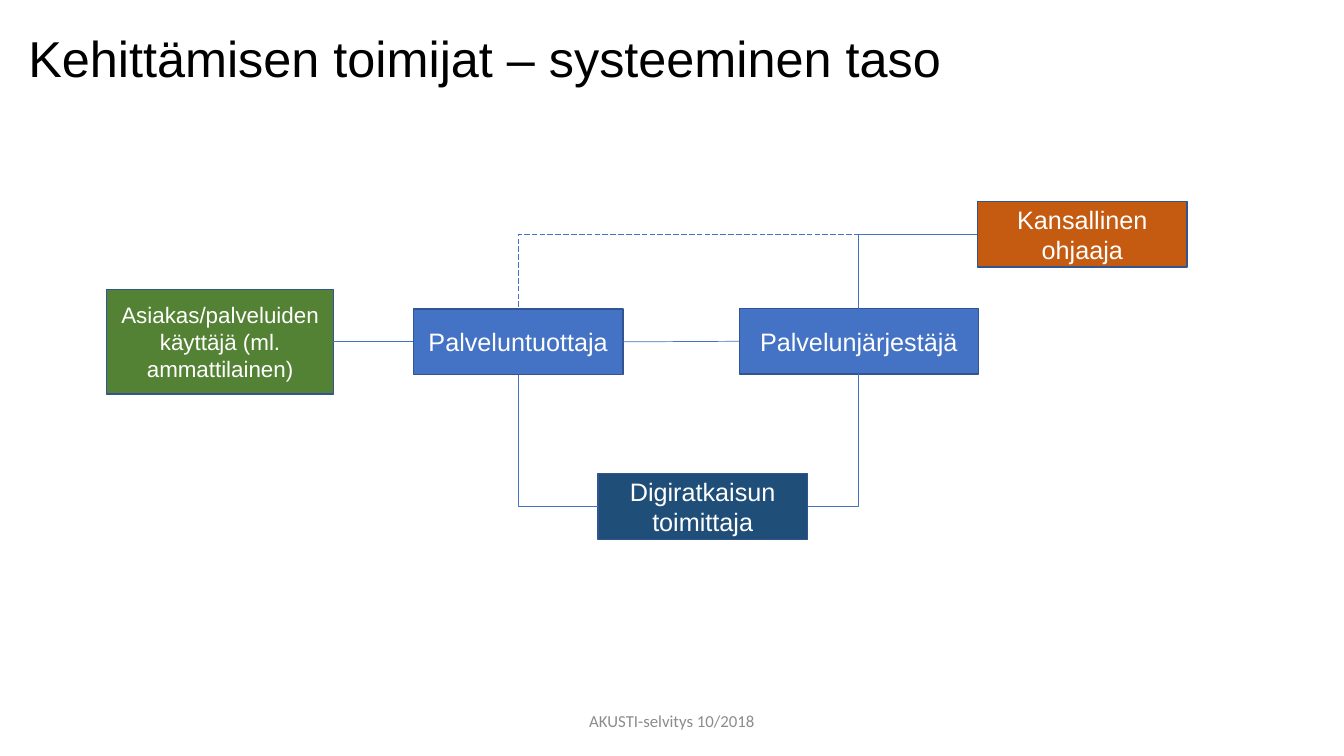
from dataclasses import dataclass

from lxml import etree
from pptx import Presentation
from pptx.dml.color import RGBColor
from pptx.enum.dml import MSO_LINE
from pptx.enum.shapes import MSO_CONNECTOR, MSO_SHAPE
from pptx.enum.text import MSO_ANCHOR, MSO_AUTO_SIZE, PP_ALIGN
from pptx.oxml.ns import qn
from pptx.shapes.autoshape import Shape
from pptx.slide import Slide
from pptx.text.text import TextFrame
from pptx.util import Pt

RECTANGLE = MSO_SHAPE.RECTANGLE
STRAIGHT, ELBOW = MSO_CONNECTOR.STRAIGHT, MSO_CONNECTOR.ELBOW
LONG_DASH = MSO_LINE.LONG_DASH
MIDDLE, TOP_ANCHOR = MSO_ANCHOR.MIDDLE, MSO_ANCHOR.TOP
CENTER, LEFT_ALIGN = PP_ALIGN.CENTER, PP_ALIGN.LEFT
GROW = MSO_AUTO_SIZE.SHAPE_TO_FIT_TEXT
TOP, LEFT, BOTTOM, RIGHT = range(4)
TITLE_ONLY = 5


@dataclass(frozen=True)
class Theme:
    font: str = "Arial"
    footer_font: str = "Calibri"
    title_size: float = 36
    box_size: float = 18
    small_size: float = 16
    footer_size: float = 12
    black: str = "000000"
    white: str = "FFFFFF"
    grey: str = "8C8C8C"
    green: str = "548235"
    blue: str = "4472C4"
    navy: str = "1F4E79"
    orange: str = "C55A11"
    border: str = "325491"


@dataclass(frozen=True)
class Actor:
    key: str
    text: str
    x: float
    y: float
    fill: str
    w: float = 149.8
    h: float = 46.8
    size: float = Theme.box_size


@dataclass(frozen=True)
class Link:
    start: str
    start_side: int
    end: str
    end_side: int
    bent: bool = False
    dashed: bool = False


THEME = Theme()

ACTORS = [
    Actor("customer", "Asiakas/palveluiden käyttäjä (ml. ammattilainen)",
          76.2, 206.8, THEME.green, 162, 74.8, THEME.small_size),
    Actor("producer", "Palveluntuottaja", 295.2, 220.8, THEME.blue),
    Actor("organiser", "Palvelunjärjestäjä", 528, 220.4, THEME.blue, 170.8),
    Actor("supplier", "Digiratkaisun toimittaja", 427, 338.4, THEME.navy),
    Actor("national", "Kansallinen ohjaaja", 698.2, 144, THEME.orange),
]

LINKS = [
    Link("customer", RIGHT, "producer", LEFT),
    Link("producer", RIGHT, "organiser", LEFT),
    Link("national", LEFT, "producer", TOP, bent=True, dashed=True),
    Link("national", LEFT, "organiser", TOP, bent=True),
    Link("supplier", LEFT, "producer", BOTTOM, bent=True),
    Link("supplier", RIGHT, "organiser", BOTTOM, bent=True),
]


def write(tf: TextFrame, text: str, font: str, size: float, color: str,
          align: PP_ALIGN, anchor: MSO_ANCHOR) -> None:
    tf.word_wrap = True
    tf.vertical_anchor = anchor
    p = tf.paragraphs[0]
    p.text = text
    p.alignment = align
    p.font.name = font
    p.font.size = Pt(size)
    p.font.color.rgb = RGBColor.from_string(color)


def place(sp: Shape, x: float, y: float, w: float, h: float) -> None:
    sp.left, sp.top, sp.width, sp.height = Pt(x), Pt(y), Pt(w), Pt(h)


def add_title(slide: Slide, text: str) -> None:
    sp = slide.shapes.title
    place(sp, 13, 16, 686, 51)
    write(sp.text_frame, text, THEME.font, THEME.title_size, THEME.black,
          LEFT_ALIGN, TOP_ANCHOR)
    sp.text_frame.auto_size = GROW


def add_footer(slide: Slide, text: str) -> None:
    sp = slide.shapes.add_textbox(Pt(318), Pt(500.5), Pt(324), Pt(28.8))
    write(sp.text_frame, text, THEME.footer_font, THEME.footer_size, THEME.grey,
          CENTER, MIDDLE)


def add_actor(slide: Slide, actor: Actor) -> Shape:
    sp = slide.shapes.add_shape(RECTANGLE, Pt(actor.x), Pt(actor.y),
                                Pt(actor.w), Pt(actor.h))
    sp.shadow.inherit = False
    sp.fill.solid()
    sp.fill.fore_color.rgb = RGBColor.from_string(actor.fill)
    sp.line.color.rgb = RGBColor.from_string(THEME.border)
    sp.line.width = Pt(1)
    write(sp.text_frame, actor.text, THEME.font, actor.size, THEME.white,
          CENTER, MIDDLE)
    return sp


def add_link(slide: Slide, link: Link, boxes: dict[str, Shape]) -> None:
    """Join two boxes; a bent link leaves sideways and turns once."""
    kind = ELBOW if link.bent else STRAIGHT
    line = slide.shapes.add_connector(kind, 0, 0, 0, 0)
    line.begin_connect(boxes[link.start], link.start_side)
    line.end_connect(boxes[link.end], link.end_side)
    line.line.color.rgb = RGBColor.from_string(THEME.blue)
    line.line.width = Pt(0.5)
    if link.dashed:
        line.line.dash_style = LONG_DASH
    props = line.element.spPr
    if link.bent:
        props.find(qn("a:prstGeom")).set("prst", "bentConnector2")
    etree.SubElement(props, qn("a:effectLst"))


def main() -> None:
    prs = Presentation()
    prs.slide_width, prs.slide_height = Pt(960), Pt(540)
    slide = prs.slides.add_slide(prs.slide_layouts[TITLE_ONLY])
    add_title(slide, "Kehittämisen toimijat – systeeminen taso")
    boxes = {actor.key: add_actor(slide, actor) for actor in ACTORS}
    for link in LINKS:
        add_link(slide, link, boxes)
    add_footer(slide, "AKUSTI-selvitys 10/2018")
    prs.save("out.pptx")


if __name__ == "__main__":
    main()
